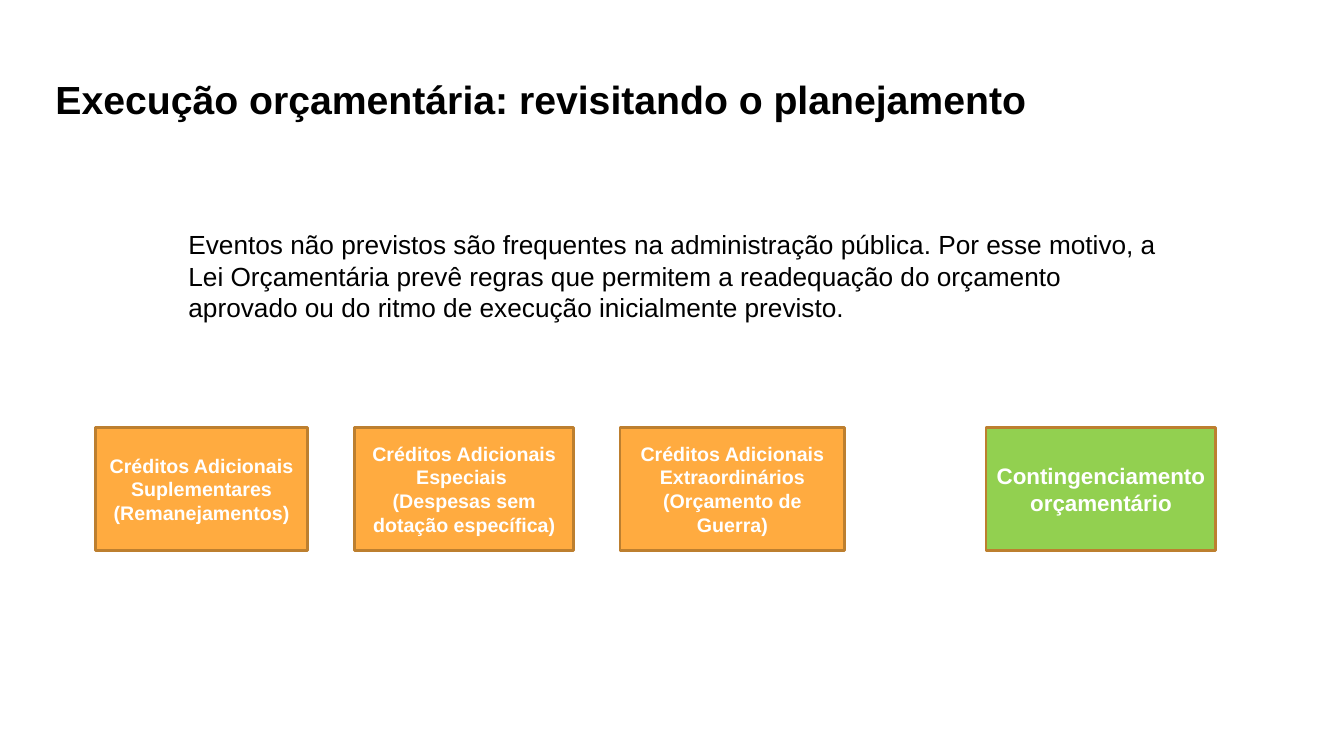
from dataclasses import dataclass

import pptx
import pptx.dml.color
import pptx.enum.shapes
import pptx.enum.text
import pptx.util
from pptx.util import Inches


@dataclass(frozen=True)
class Theme:
    font: str = "Arial"
    text: str = "000000"
    box_text: str = "FFFFFF"
    credit: str = "FFAB40"
    contingency: str = "92D050"
    border: str = "BD7F2F"
    border_width: float = 2
    title_size: float = 28
    body_size: float = 18.7
    credit_size: float = 14
    contingency_size: float = 16


THEME = Theme()
BOX_TOP, BOX_HEIGHT = 4.24, 1.22

# Left, width, text, fill, type size; "\v" is a line break
BOXES = [
    (0.95, 2.1, "Créditos Adicionais Suplementares (Remanejamentos)",
     THEME.credit, THEME.credit_size),
    (3.52, 2.17, "Créditos Adicionais Especiais \v(Despesas sem dotação específica)",
     THEME.credit, THEME.credit_size),
    (6.15, 2.23, "Créditos Adicionais Extraordinários (Orçamento de Guerra)",
     THEME.credit, THEME.credit_size),
    (9.78, 2.28, "Contingenciamento\vorçamentário",
     THEME.contingency, THEME.contingency_size),
]


def rgb(value):
    return pptx.dml.color.RGBColor.from_string(value)


def set_text(shape, text, size, color, bold=False, centered=False, vertical_inset=0.05):
    text_frame = shape.text_frame
    text_frame.text = text
    text_frame.word_wrap = True
    text_frame.auto_size = pptx.enum.text.MSO_AUTO_SIZE.NONE
    text_frame.margin_left = text_frame.margin_right = Inches(0.1)
    text_frame.margin_top = text_frame.margin_bottom = Inches(vertical_inset)
    anchors = pptx.enum.text.MSO_ANCHOR
    text_frame.vertical_anchor = anchors.MIDDLE if centered else anchors.TOP
    alignments = pptx.enum.text.PP_ALIGN
    for paragraph in text_frame.paragraphs:
        paragraph.alignment = alignments.CENTER if centered else alignments.LEFT
        for run in paragraph.runs:
            run.font.name = THEME.font
            run.font.size = pptx.util.Pt(size)
            run.font.bold = bold
            run.font.color.rgb = rgb(color)


def add_title(slide, text):
    title = slide.shapes.title
    title.left, title.top = Inches(0.45), Inches(0.65)
    title.width, title.height = Inches(12.42), Inches(0.84)
    set_text(title, text, THEME.title_size, THEME.text, bold=True, vertical_inset=0.1)


def add_explanation(slide, text):
    box = slide.shapes.add_textbox(Inches(1.77), Inches(2.22), Inches(9.91), Inches(1.04))
    set_text(box, text, THEME.body_size, THEME.text)
    box.text_frame.auto_size = pptx.enum.text.MSO_AUTO_SIZE.SHAPE_TO_FIT_TEXT


def add_box(slide, left, width, text, fill, size):
    box = slide.shapes.add_shape(
        pptx.enum.shapes.MSO_SHAPE.RECTANGLE,
        Inches(left), Inches(BOX_TOP), Inches(width), Inches(BOX_HEIGHT))
    box.shadow.inherit = False
    box.fill.solid()
    box.fill.fore_color.rgb = rgb(fill)
    box.line.color.rgb = rgb(THEME.border)
    box.line.width = pptx.util.Pt(THEME.border_width)
    set_text(box, text, size, THEME.box_text, bold=True, centered=True)


def main():
    presentation = pptx.Presentation()
    presentation.slide_width = Inches(13.33)
    presentation.slide_height = Inches(7.5)
    title_only = presentation.slide_layouts.get_by_name("Title Only")
    slide = presentation.slides.add_slide(title_only)
    add_title(slide, "Execução orçamentária: revisitando o planejamento")
    add_explanation(
        slide,
        "Eventos não previstos são frequentes na administração pública. "
        "Por esse motivo, a Lei Orçamentária prevê regras que permitem a "
        "readequação do orçamento aprovado ou do ritmo de execução "
        "inicialmente previsto.")
    for box in BOXES:
        add_box(slide, *box)
    presentation.save("out.pptx")


if __name__ == "__main__":
    main()
